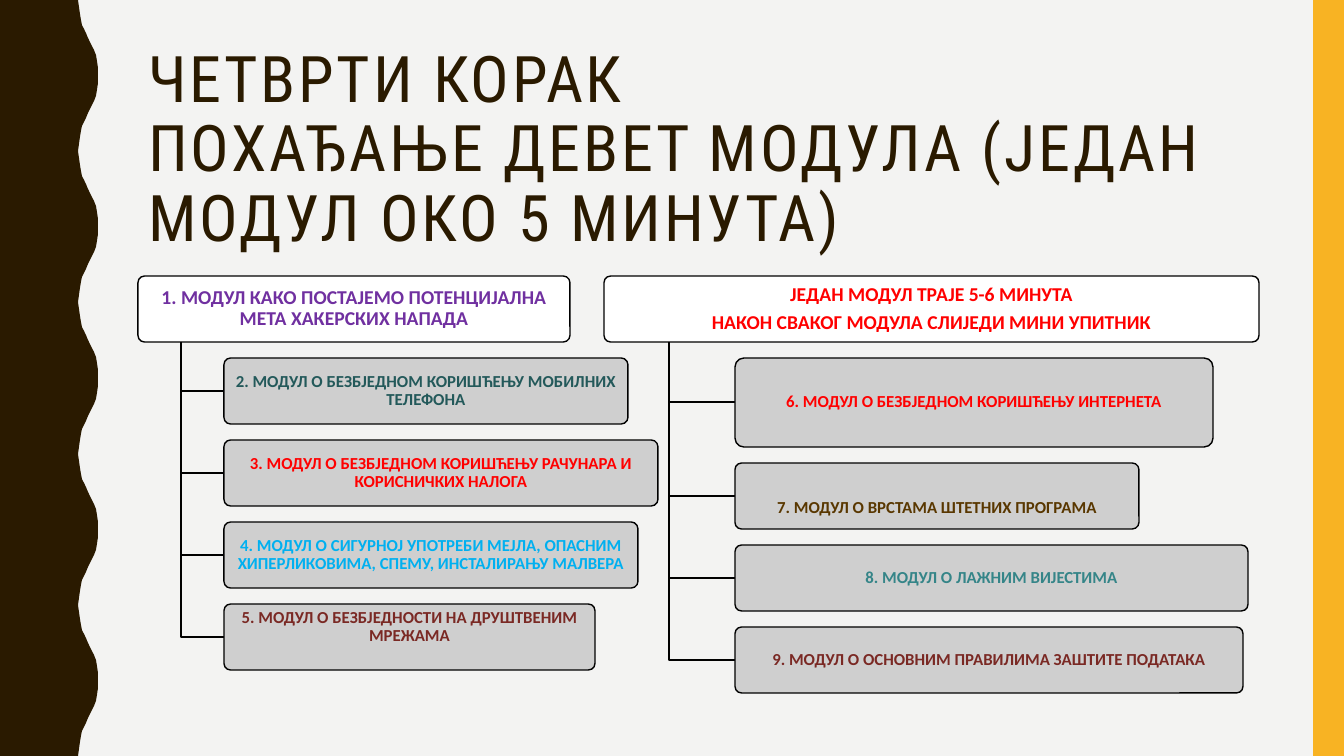
from lxml import etree
from pptx import Presentation
from pptx import util as u
from pptx.dml import color
from pptx.enum import shapes, text
from pptx.oxml import ns

HUE = {
    "paper": "F3F3F2", "dark": "2A1A00", "gold": "F8B323", "white": "FFFFFF",
    "grey": "CCCCCC", "black": "000000", "violet": "7030A0", "pine": "23595A",
    "red": "FF0000", "sky": "00B0F0", "wine": "7A2924", "brown": "593700",
    "teal": "358588",
}
TITLE = "ЧЕТВРТИ КОРАК\vПОХАЂАЊЕ ДЕВЕТ МОДУЛА (ЈЕДАН МОДУЛ ОКО 5 МИНУТА)"
TREES = [
    {"left": 138, "width": 432, "hue": "violet",
     "head": "1. МОДУЛ КАКО ПОСТАЈЕМО ПОТЕНЦИЈАЛНА МЕТА ХАКЕРСКИХ НАПАДА",
     "items": [
         ("2. МОДУЛ О БЕЗБЈЕДНОМ КОРИШЋЕЊУ МОБИЛНИХ ТЕЛЕФОНА", "pine", 404, 66, {}),
         ("3. МОДУЛ О БЕЗБЈЕДНОМ КОРИШЋЕЊУ РАЧУНАРА И КОРИСНИЧКИХ НАЛОГА",
          "red", 434, 66, {}),
         ("4. МОДУЛ О СИГУРНОЈ УПОТРЕБИ МЕЈЛА, ОПАСНИМ ХИПЕРЛИКОВИМА, "
          "СПЕМУ, ИНСТАЛИРАЊУ МАЛВЕРА", "sky", 414, 66, {}),
         ("5. МОДУЛ О БЕЗБЈЕДНОСТИ НА ДРУШТВЕНИМ МРЕЖАМА",
          "wine", 371, 66, {"margin_bottom": 24}),
     ]},
    {"left": 604, "width": 655, "hue": "red",
     "head": "ЈЕДАН МОДУЛ ТРАЈЕ 5-6 МИНУТА\nНАКОН СВАКОГ МОДУЛА СЛИЈЕДИ МИНИ УПИТНИК",
     "items": [
         ("6. МОДУЛ О БЕЗБЈЕДНОМ КОРИШЋЕЊУ ИНТЕРНЕТА", "red", 478, 89, {}),
         ("7. МОДУЛ О ВРСТАМА ШТЕТНИХ ПРОГРАМА",
          "brown", 404, 66, {"margin_top": 28}),
         ("8. МОДУЛ О ЛАЖНИМ ВИЈЕСТИМА", "teal", 513, 66, {}),
         ("9. МОДУЛ О ОСНОВНИМ ПРАВИЛИМА ЗАШТИТЕ ПОДАТАКА", "wine", 508, 66, {}),
     ]},
]
WAVE = [(78, 0), (79, 7), (80, 14), (81, 20), (82, 25), (84, 29), (86, 33),
        (88, 38), (90, 42), (92, 46), (94, 50), (96, 55), (97, 61), (98, 68)]
WIDE, HIGH, TOP, ROW, GAP, CYCLES = 1344, 756, 276, 66, 16, 5
SCALE = 914400 / 100.8
INSET = {"margin_left": 5, "margin_right": 5, "margin_top": 4, "margin_bottom": 4}


def px(n):
    return round(n * SCALE)


def rgb(name):
    return color.RGBColor.from_string(HUE[name])


def assign(obj, vals):
    for key, val in vals.items():
        setattr(obj, key, val)


def paint(shape, fill=None, line=None):
    shape.shadow.inherit = False
    if fill:
        shape.fill.solid()
        shape.fill.fore_color.rgb = rgb(fill)
    else:
        shape.fill.background()
    if line:
        shape.line.color.rgb = rgb(line)
        shape.line.width = u.Pt(1)
    else:
        shape.line.fill.background()


def trace(slide, dots, close):
    pen = slide.shapes.build_freeform(*dots[0], scale=SCALE)
    pen.add_line_segments(dots[1:], close=close)
    return pen.convert_to_shape()


def card(slide, box, words, hue, fill, size, pad):
    shape = slide.shapes.add_shape(
        shapes.MSO_SHAPE.ROUNDED_RECTANGLE, *map(px, box))
    shape.adjustments[0] = 0.1
    paint(shape, fill, "black")
    if fill == "grey":
        tone = shape.fill._xPr.find(".//" + ns.qn("a:srgbClr"))
        etree.SubElement(tone, ns.qn("a:alpha"), val="90000")
    frame = shape.text_frame
    assign(frame, {key: px(val) for key, val in {**INSET, **pad}.items()})
    assign(frame, {"word_wrap": True, "vertical_anchor": text.MSO_ANCHOR.MIDDLE})
    frame.text = words
    for para in frame.paragraphs:
        assign(para, {"alignment": text.PP_ALIGN.CENTER, "line_spacing": 0.9,
                      "space_after": u.Pt(size * 0.35)})
        assign(para.runs[0].font, {"name": "Calibri", "size": u.Pt(size), "bold": True})
        para.runs[0].font.color.rgb = rgb(hue)


def frame_slide(slide):
    slide.background.fill.solid()
    slide.background.fill.fore_color.rgb = rgb("paper")
    step = HIGH / CYCLES
    edge = []
    for n in range(CYCLES):
        edge += [(x, n * step + y) for x, y in WAVE]
        edge += [(x, (n + 1) * step - y) for x, y in reversed(WAVE)]
    paint(trace(slide, [(0, 0), *edge, (0, HIGH)], True), "dark")
    band = slide.shapes.add_shape(
        shapes.MSO_SHAPE.RECTANGLE, *map(px, (1313, 0, 31, HIGH)))
    paint(band, "gold")


def add_title(slide):
    title = slide.shapes.title
    assign(title, dict(zip(("left", "top", "width", "height"),
                           map(px, (138, 42, 1122, 164)))))
    frame = title.text_frame
    assign(frame, {"word_wrap": True, "vertical_anchor": text.MSO_ANCHOR.TOP,
                   "auto_size": text.MSO_AUTO_SIZE.NONE})
    frame.text = TITLE
    para = frame.paragraphs[0]
    assign(para, {"alignment": text.PP_ALIGN.LEFT, "line_spacing": 0.9})
    for run in para.runs:
        assign(run.font, {"name": "Roboto Condensed", "size": u.Pt(45.9)})
        run.font.color.rgb = rgb("dark")
        run.font._element.set("spc", "200")


def add_tree(slide, tree):
    left, width = tree["left"], tree["width"]
    trunk, child = left + width // 10, left + width // 5
    base = TOP + ROW
    card(slide, (left, TOP, width, ROW), tree["head"], tree["hue"], "white", 14, {})
    y = base + GAP
    for words, hue, wide, high, pad in tree["items"]:
        mid = y + high / 2
        paint(trace(slide, [(trunk, base), (trunk, mid), (child, mid)], False),
              line="black")
        card(slide, (child, y, wide, high), words, hue, "grey", 12, pad)
        y += high + GAP


def main():
    deck = Presentation()
    assign(deck, {"slide_width": px(WIDE), "slide_height": px(HIGH)})
    slide = deck.slides.add_slide(deck.slide_layouts[5])
    frame_slide(slide)
    add_title(slide)
    for tree in TREES:
        add_tree(slide, tree)
    deck.save("out.pptx")


if __name__ == "__main__":
    main()
